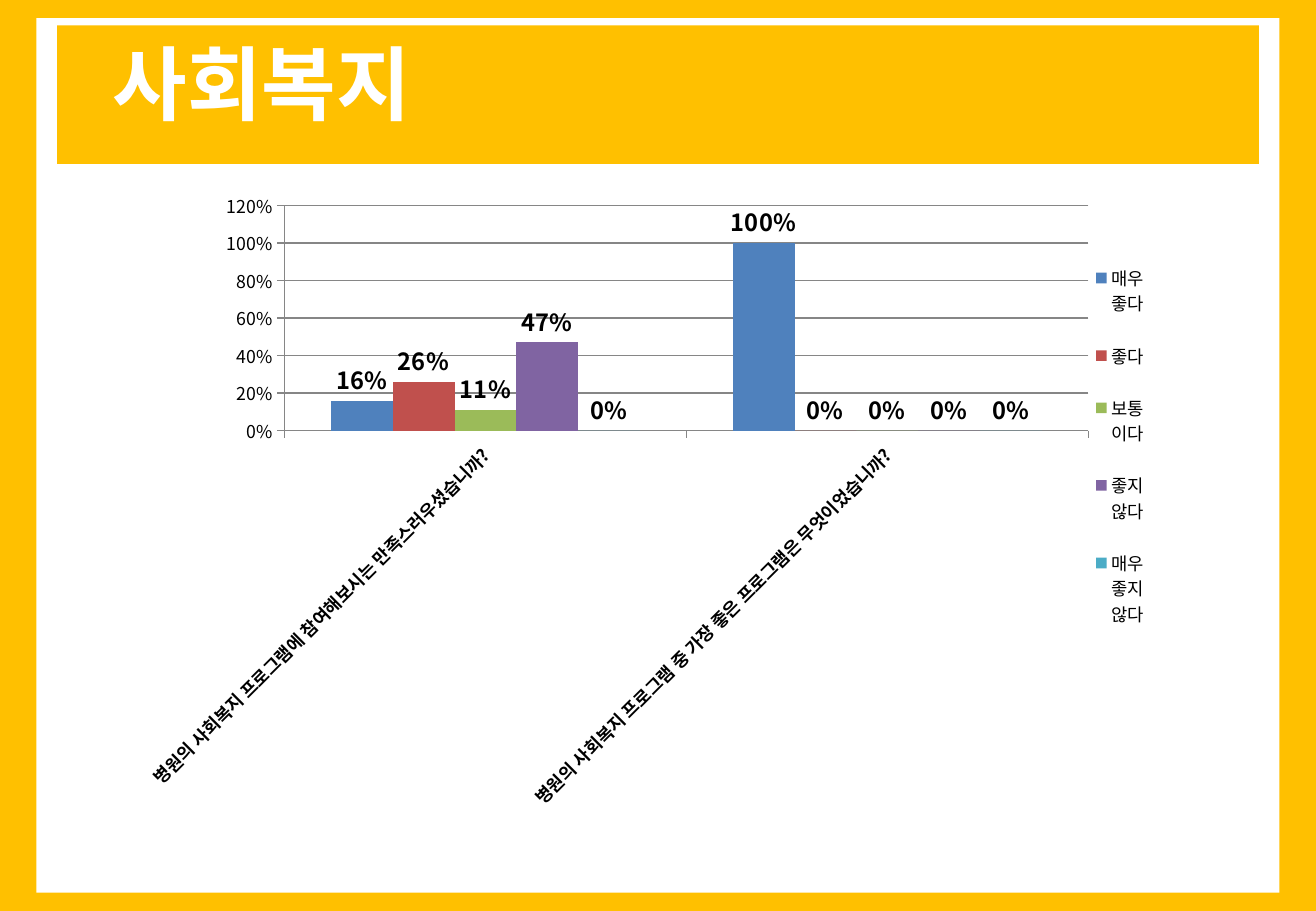
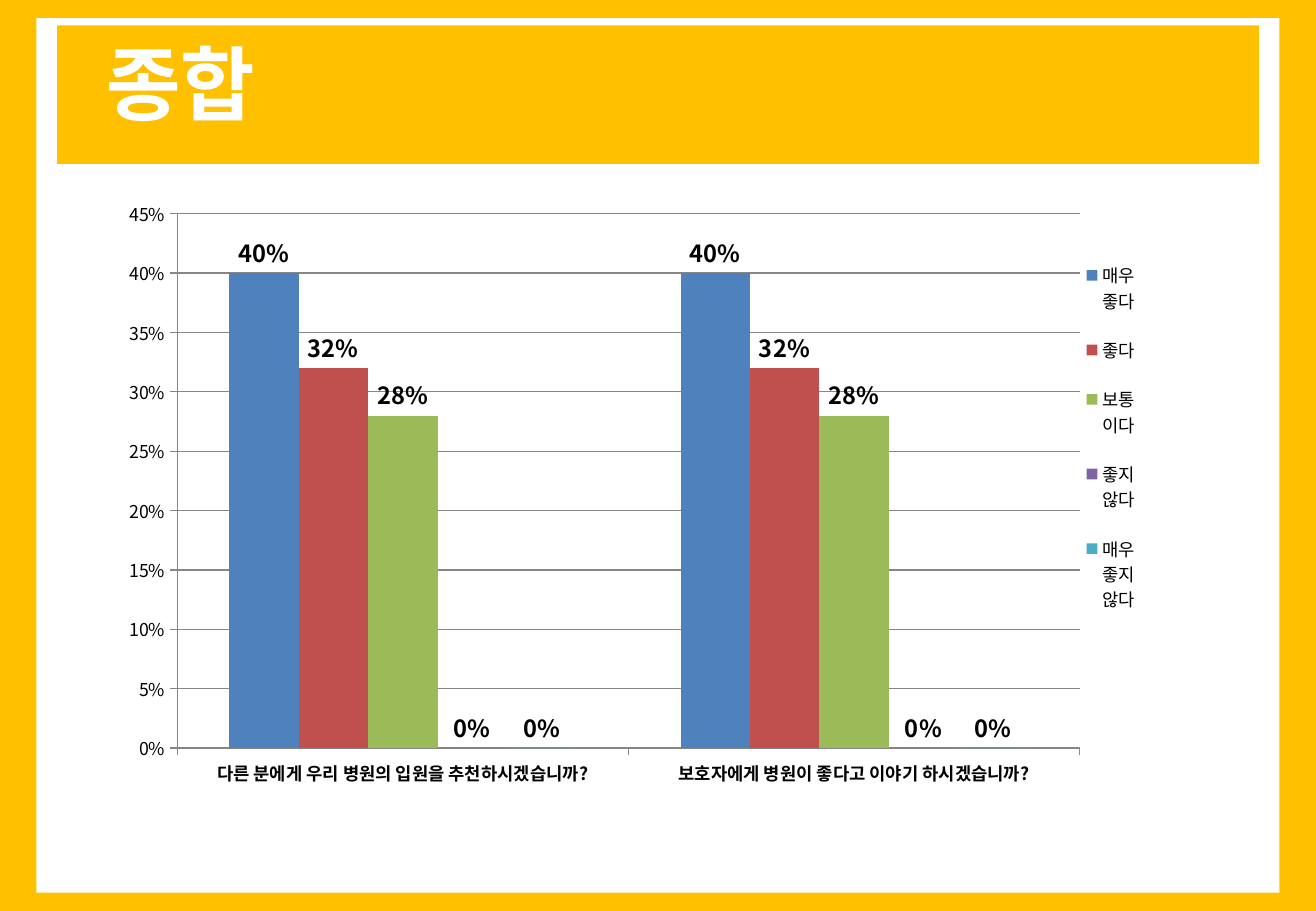
"""Build two survey-result slides, each with a title band and a column chart."""
from dataclasses import dataclass

from lxml import etree
from pptx import Presentation
from pptx import util as u
from pptx.chart.data import CategoryChartData
from pptx.dml.color import RGBColor
from pptx.enum import chart as charts, shapes, text
from pptx.oxml import ns


@dataclass(frozen=True)
class Theme:
    font: str = "Noto Sans CJK KR"
    gold: RGBColor = RGBColor.from_string("FFC000")
    white: RGBColor = RGBColor.from_string("FFFFFF")
    black: RGBColor = RGBColor.from_string("000000")
    rule: RGBColor = RGBColor.from_string("868686")
    series: tuple = ("4F81BD", "C0504D", "9BBB59", "8064A2", "4BACC6")
    title_size: float = 48
    label_size: float = 14
    axis_size: float = 10.5


theme = Theme()
deck = Presentation()
deck.slide_width, deck.slide_height = u.Inches(10.83), u.Inches(7.5)
COLUMN, ROW = deck.slide_width / 100, deck.slide_height / 100


def place(left, top, width, height):
    """Turn columns and rows of a 100 by 100 grid into slide lengths."""
    return [int(left * COLUMN), int(top * ROW), int(width * COLUMN), int(height * ROW)]


def set_layout(parent, index, shares, target=None):
    """Fix a chart part at shares (x, y, w, h) of the chart's size."""
    for old in parent.findall(ns.qn("c:layout")):
        parent.remove(old)
    layout = etree.Element(ns.qn("c:layout"))
    manual = etree.SubElement(layout, ns.qn("c:manualLayout"))
    settings = [("layoutTarget", target)] if target else []
    settings += [("xMode", "edge"), ("yMode", "edge"), *zip("xywh", shares)]
    for name, value in settings:
        etree.SubElement(manual, ns.qn(f"c:{name}")).set("val", str(value))
    parent.insert(index, layout)


MARGIN, BAND_MARGIN = 2.77, 4.34
FRAME = (
    ((0, 0, 100, 100), theme.gold),
    ((MARGIN, 2, 100 - 2 * MARGIN, 96), theme.white),
    ((BAND_MARGIN, 2.8, 100 - 2 * BAND_MARGIN, 15.2), theme.gold),
)
ANSWERS = ("매우\n좋다", "좋다", "보통\n이다", "좋지\n않다", "매우\n좋지\n않다")
PAGES = (
    dict(
        title="사회복지", title_width=26.32,
        chart_at=(8.86, 19.73, 80.79, 70.8),
        plot=(0.158, 0.04, 0.756, 0.349), legend=(0.912, 0.091, 0.064, 0.643),
        top=1.2, step=0.2, rotation=-45,
        answers={
            "병원의 사회복지 프로그램에 참여해보시는 만족스러우셨습니까?": (0.16, 0.26, 0.11, 0.47, 0),
            "병원의 사회복지 프로그램 중 가장 좋은 프로그램은 무엇이었습니까?": (1, 0, 0, 0, 0),
        },
    ),
    dict(
        title="종합", title_width=14.04,
        chart_at=(8.22, 20.8, 80.79, 66.67),
        plot=(0.065, 0.04, 0.849, 0.88), legend=(0.911, 0.081, 0.064, 0.654),
        top=0.45, step=0.05, rotation=0,
        answers={
            "다른 분에게 우리 병원의 입원을 추천하시겠습니까?": (0.4, 0.32, 0.28, 0, 0),
            "보호자에게 병원이 좋다고 이야기 하시겠습니까?": (0.4, 0.32, 0.28, 0, 0),
        },
    ),
)

for content in PAGES:
    page = deck.slides.add_slide(deck.slide_layouts[6])
    for area, color in FRAME:
        panel = page.shapes.add_shape(shapes.MSO_SHAPE.RECTANGLE, *place(*area))
        panel.shadow.inherit = False
        panel.fill.solid()
        panel.fill.fore_color.rgb = color
        panel.line.fill.background()

    box = page.shapes.add_textbox(*place(6.74, 3.07, content["title_width"], 12.13))
    box.text_frame.text = content["title"]
    box.text_frame.word_wrap = False
    box.text_frame.auto_size = text.MSO_AUTO_SIZE.SHAPE_TO_FIT_TEXT
    para = box.text_frame.paragraphs[0]
    para.alignment = text.PP_ALIGN.CENTER
    span = para.runs[0]

    data = CategoryChartData(number_format="0%")
    data.categories = list(content["answers"])
    for name, values in zip(ANSWERS, zip(*content["answers"].values())):
        data.add_series(name, values)
    frame = page.shapes.add_chart(
        charts.XL_CHART_TYPE.COLUMN_CLUSTERED, *place(*content["chart_at"]), data)
    chart = frame.chart
    chart.has_title = False
    chart.has_legend = True
    chart.legend.position = charts.XL_LEGEND_POSITION.RIGHT
    chart.legend.include_in_layout = False

    plot = chart.plots[0]
    plot.vary_by_categories = False
    plot.gap_width, plot.overlap = 150, 0
    for series, color in zip(plot.series, theme.series):
        series.invert_if_negative = False
        series.format.fill.solid()
        series.format.fill.fore_color.rgb = RGBColor.from_string(color)
    plot.has_data_labels = True
    labels = plot.data_labels
    labels.show_value = True
    labels.number_format, labels.number_format_is_linked = "0%", False
    labels.position = charts.XL_LABEL_POSITION.OUTSIDE_END

    categories, scale = chart.category_axis, chart.value_axis
    scale.minimum_scale, scale.maximum_scale = 0, content["top"]
    scale.major_unit = content["step"]
    scale.has_major_gridlines = True
    scale.tick_labels.number_format = "0%"
    scale.tick_labels.number_format_is_linked = False
    for axis in (categories, scale):
        axis.major_tick_mark = charts.XL_TICK_MARK.OUTSIDE
        axis.minor_tick_mark = charts.XL_TICK_MARK.NONE
    for rule in (categories.format.line, scale.format.line, scale.major_gridlines.format.line):
        rule.color.rgb = theme.rule
        rule.width = u.Pt(0.75)

    for font, size, bold, color in (
        (span.font, theme.title_size, True, theme.white),
        (chart.font, theme.axis_size, False, theme.black),
        (chart.legend.font, theme.axis_size, False, theme.black),
        (labels.font, theme.label_size, True, theme.black),
        (categories.tick_labels.font, theme.axis_size, True, theme.black),
        (scale.tick_labels.font, theme.axis_size, False, theme.black),
    ):
        font.name, font.size, font.bold = theme.font, u.Pt(size), bold
        font.color.rgb = color

    chart_xml = chart.element if hasattr(chart, "element") else chart._chartSpace
    for root in (box.element, chart_xml):
        for latin in list(root.iter(ns.qn("a:latin"))):
            east_asian = etree.Element(ns.qn("a:ea"))
            east_asian.set("typeface", theme.font)
            latin.addnext(east_asian)
    body = chart_xml.find(f".//{ns.qn('c:catAx')}/{ns.qn('c:txPr')}/{ns.qn('a:bodyPr')}")
    body.set("rot", str(content["rotation"] * 60000))
    set_layout(chart_xml.find(f".//{ns.qn('c:plotArea')}"), 0, content["plot"], "inner")
    set_layout(chart_xml.find(f".//{ns.qn('c:legend')}"), 1, content["legend"])

deck.save("out.pptx")
